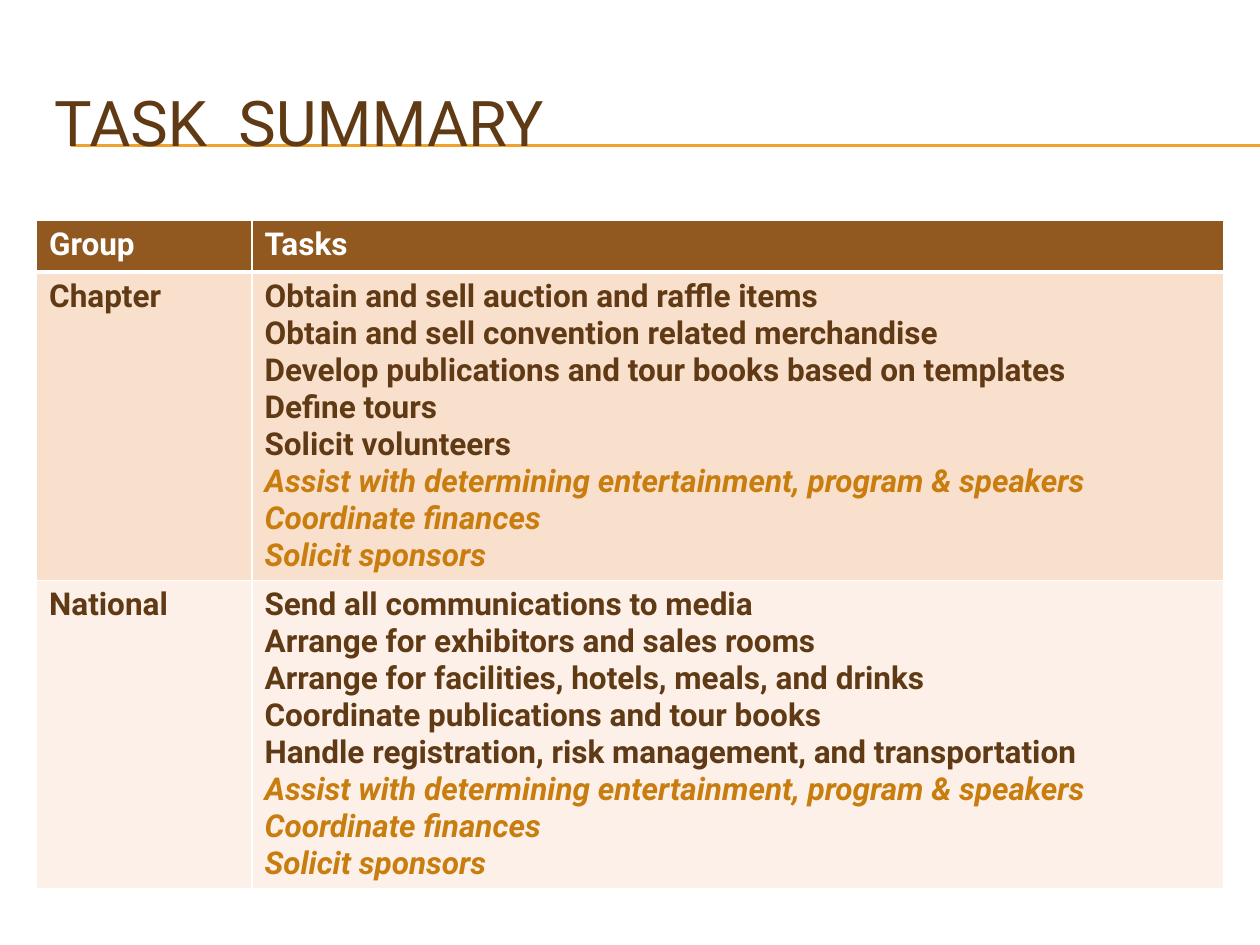
from dataclasses import dataclass

from lxml import etree
from pptx import Presentation
from pptx.dml.color import RGBColor
from pptx.enum.shapes import MSO_CONNECTOR
from pptx.enum.text import MSO_ANCHOR, PP_ALIGN
from pptx.oxml.ns import qn
from pptx.util import Inches, Pt

STRAIGHT = MSO_CONNECTOR.STRAIGHT
MIDDLE = MSO_ANCHOR.MIDDLE
LEFT = PP_ALIGN.LEFT

FONT = "Roboto"
WHITE = RGBColor(0xFF, 0xFF, 0xFF)
GOLD = RGBColor(0xF0, 0xA2, 0x2E)
BROWN = RGBColor(0x60, 0x3A, 0x14)
HEADER_BROWN = RGBColor(0x91, 0x58, 0x1F)
SHARED_ORANGE = RGBColor(0xC8, 0x7D, 0x0E)
PEACH = RGBColor(0xF9, 0xE0, 0xCD)
PALE_PEACH = RGBColor(0xFC, 0xF0, 0xE8)

SHARED_TASKS = (
    "Assist with determining entertainment, program & speakers",
    "Coordinate finances",
    "Solicit sponsors",
)
COLUMN_WIDTHS = (1.71, 7.71)
RULE_HEIGHTS = (1.15, 1.16)


@dataclass(frozen=True)
class TaskRow:
    group: str
    tasks: tuple[str, ...]
    fill: RGBColor
    height: float = 2.44
    color: RGBColor = BROWN
    shared: tuple[str, ...] = SHARED_TASKS
    top_border: float = 1
    bottom_border: float = 1


ROWS = (
    TaskRow("Group", ("Tasks",), HEADER_BROWN, height=0.41, color=WHITE,
            shared=(), bottom_border=3),
    TaskRow("Chapter", (
        "Obtain and sell auction and raffle items",
        "Obtain and sell convention related merchandise",
        "Develop publications and tour books based on templates",
        "Define tours",
        "Solicit volunteers",
    ), PEACH, top_border=3),
    TaskRow("National", (
        "Send all communications to media",
        "Arrange for exhibitors and sales rooms",
        "Arrange for facilities, hotels, meals, and drinks",
        "Coordinate publications and tour books",
        "Handle registration, risk management, and transportation",
    ), PALE_PEACH),
)


def add_text(frame, text: str, *, size: float = 18, color: RGBColor = BROWN,
             bold: bool = True, italic: bool = False) -> None:
    """Write a paragraph, using the frame's first one while it is empty."""
    first = frame.paragraphs[0]
    para = frame.add_paragraph() if first.runs else first
    para.alignment = LEFT
    span = para.add_run()
    span.text = text
    span.font.name = FONT
    span.font.size = Pt(size)
    span.font.bold = bold
    span.font.italic = italic
    span.font.color.rgb = color


def set_borders(cell, top: float, bottom: float) -> None:
    properties = cell._tc.get_or_add_tcPr()
    for side, width in (("L", 1), ("R", 1), ("T", top), ("B", bottom)):
        border = etree.SubElement(properties, qn(f"a:ln{side}"), w=str(Pt(width)))
        fill = etree.SubElement(border, qn("a:solidFill"))
        etree.SubElement(fill, qn("a:srgbClr"), val=str(WHITE))


def add_rule(page, height: float):
    rule = page.shapes.add_connector(
        STRAIGHT, Inches(0.56), Inches(height), Inches(10), Inches(height))
    rule.line.color.rgb = GOLD
    rule.line.width = Pt(0.75)
    etree.SubElement(rule.element.spPr, qn("a:effectLst"))
    return rule


def add_title(page) -> None:
    title = page.shapes.title
    title.left, title.top = Inches(0.33), Inches(0.5)
    title.width, title.height = Inches(9.5), Inches(0.92)
    title.text_frame.vertical_anchor = MIDDLE
    add_text(title.text_frame, "TASK  SUMMARY", size=36, bold=False)
    for height in RULE_HEIGHTS:
        title.element.addprevious(add_rule(page, height).element)


def fill_row(cells, row: TaskRow) -> None:
    group_cell, tasks_cell = cells
    for cell in cells:
        set_borders(cell, row.top_border, row.bottom_border)
        cell.fill.solid()
        cell.fill.fore_color.rgb = row.fill
    add_text(group_cell.text_frame, row.group, color=row.color)
    for task in row.tasks:
        add_text(tasks_cell.text_frame, task, color=row.color)
    for task in row.shared:
        add_text(tasks_cell.text_frame, task, color=SHARED_ORANGE, italic=True)


def add_task_table(page) -> None:
    table = page.shapes.add_table(
        len(ROWS), len(COLUMN_WIDTHS), Inches(0.29), Inches(1.75),
        Inches(sum(COLUMN_WIDTHS)), Inches(sum(row.height for row in ROWS))).table
    for column, width in zip(table.columns, COLUMN_WIDTHS):
        column.width = Inches(width)
    for table_row, row in zip(table.rows, ROWS):
        table_row.height = Inches(row.height)
        fill_row(tuple(table_row.cells), row)


def main() -> None:
    deck = Presentation()
    deck.slide_width, deck.slide_height = Inches(10), Inches(7.5)
    page = deck.slides.add_slide(deck.slide_layouts[5])
    page.background.fill.solid()
    page.background.fill.fore_color.rgb = WHITE
    add_title(page)
    add_task_table(page)
    deck.save("out.pptx")


if __name__ == "__main__":
    main()
